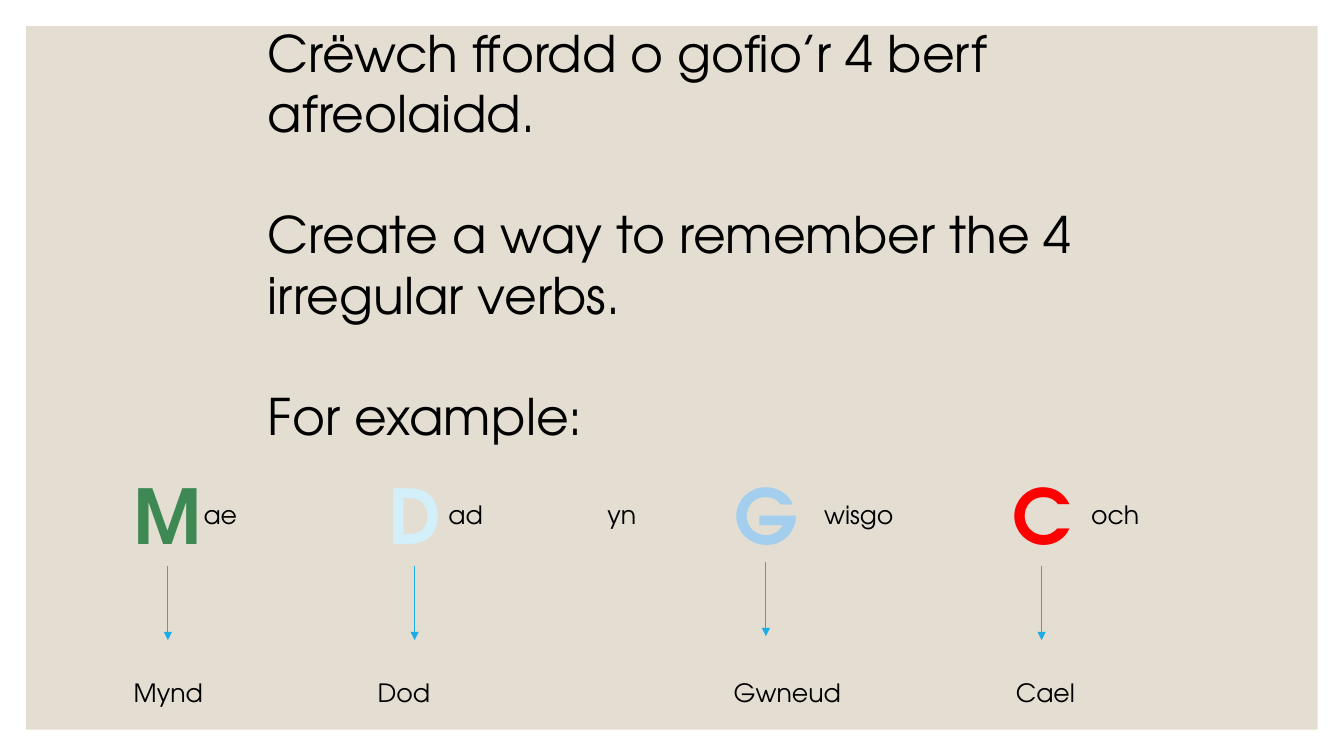
from dataclasses import dataclass

from lxml import etree
from pptx import Presentation
from pptx import util as u
from pptx.dml.color import RGBColor
from pptx.enum import shapes, text
from pptx.oxml.ns import qn


@dataclass(frozen=True)
class Theme:
    font: str = "TeX Gyre Adventor"
    panel: str = "E3DED1"
    ink: str = "000000"
    arrow: str = "1CADE4"
    green: str = "3E8853"
    pale: str = "D2EFFA"
    blue: str = "A3CEED"
    red: str = "FF0000"
    heading_size: int = 36
    initial_size: int = 54
    body_size: int = 18
    heading_gap: float = 43.2
    arrow_width: float = 0.5


class SlideBuilder:
    def __init__(self, slide, theme):
        self.slide = slide
        self.theme = theme

    def panel(self, left, top, width, height):
        shape = self.slide.shapes.add_shape(
            shapes.MSO_SHAPE.RECTANGLE, u.Cm(left), u.Cm(top), u.Cm(width), u.Cm(height))
        shape.shadow.inherit = False
        shape.fill.solid()
        shape.fill.fore_color.rgb = RGBColor.from_string(self.theme.panel)
        shape.line.fill.background()

    def text(self, lines, left, top, width, height, size, color=None,
             bold=False, wrap=True, align=text.PP_ALIGN.LEFT):
        shape = self.slide.shapes.add_textbox(u.Cm(left), u.Cm(top), u.Cm(width), u.Cm(height))
        frame = shape.text_frame
        frame.word_wrap = wrap
        frame.auto_size = text.MSO_AUTO_SIZE.SHAPE_TO_FIT_TEXT
        for index, line in enumerate(lines):
            paragraph = frame.add_paragraph() if index else frame.paragraphs[0]
            paragraph.text = line
            paragraph.alignment = align
            if index:
                paragraph.space_before = u.Pt(self.theme.heading_gap)
            paragraph.font.name = self.theme.font
            paragraph.font.size = u.Pt(size)
            paragraph.font.bold = bold
            paragraph.font.color.rgb = RGBColor.from_string(color or self.theme.ink)
        return shape

    def initial(self, letter, color, center, top, width, height):
        return self.text([letter], center - width / 2, top, width, height,
                         self.theme.initial_size, color, bold=True, wrap=False,
                         align=text.PP_ALIGN.CENTER)

    def label(self, word, left, top, width):
        self.text([word], left, top, width, 1.02, self.theme.body_size)

    def arrow(self, center, top, length, source=None):
        connector = self.slide.shapes.add_connector(
            shapes.MSO_CONNECTOR.STRAIGHT,
            u.Cm(center), u.Cm(top), u.Cm(center), u.Cm(top + length))
        if source is not None:
            connector.begin_connect(source, 2)
        connector.line.color.rgb = RGBColor.from_string(self.theme.arrow)
        connector.line.width = u.Pt(self.theme.arrow_width)
        properties = connector._element.spPr
        etree.SubElement(properties.find(qn("a:ln")), qn("a:tailEnd"), type="triangle")
        etree.SubElement(properties, qn("a:effectLst"))


def main():
    theme = Theme()
    presentation = Presentation()
    presentation.slide_width = u.Cm(33.87)
    presentation.slide_height = u.Cm(19.05)
    slide = presentation.slides.add_slide(presentation.slide_layouts[6])
    builder = SlideBuilder(slide, theme)

    # Background panel and instructions
    builder.panel(0.66, 0.66, 32.55, 17.73)
    builder.text(["Crëwch ffordd o gofio’r 4 berf afreolaidd.",
                  "Create a way to remember the 4 irregular verbs.",
                  "For example:"],
                 6.5, 0.43, 21.16, 11.02, theme.heading_size)

    # Mnemonic: initial, colour, centre, width, ending and its left, verb and its left
    initial_top, initial_height = 11.68, 2.57
    ending_top, verb_top = 12.47, 16.94
    arrow_length = 1.88
    mnemonic = [
        ("M", theme.green, 4.23, 2.24, "ae", 4.88, "Mynd", 3.12),
        ("D", theme.pale, 10.45, 1.85, "ad", 11.05, "Dod", 9.27),
        ("G", theme.blue, 19.3, 2.13, "wisgo", 20.52, "Gwneud", 18.24),
        ("C", theme.red, 26.25, 2.0, "och", 27.25, "Cael", 25.35),
    ]
    for letter, color, center, width, ending, ending_left, verb, verb_left in mnemonic:
        initial = builder.initial(letter, color, center, initial_top, width, initial_height)
        builder.label(ending, ending_left, ending_top, 4.06)
        builder.label(verb, verb_left, verb_top, 3.84)
        # The G arrow sits slightly higher, so it stays free of its letter box
        if letter == "G":
            builder.arrow(center, 14.15, arrow_length)
        else:
            builder.arrow(center, initial_top + initial_height, arrow_length, initial)

    # Linking word without a verb
    builder.label("yn", 15.06, ending_top, 4.06)

    presentation.save("out.pptx")


if __name__ == "__main__":
    main()
